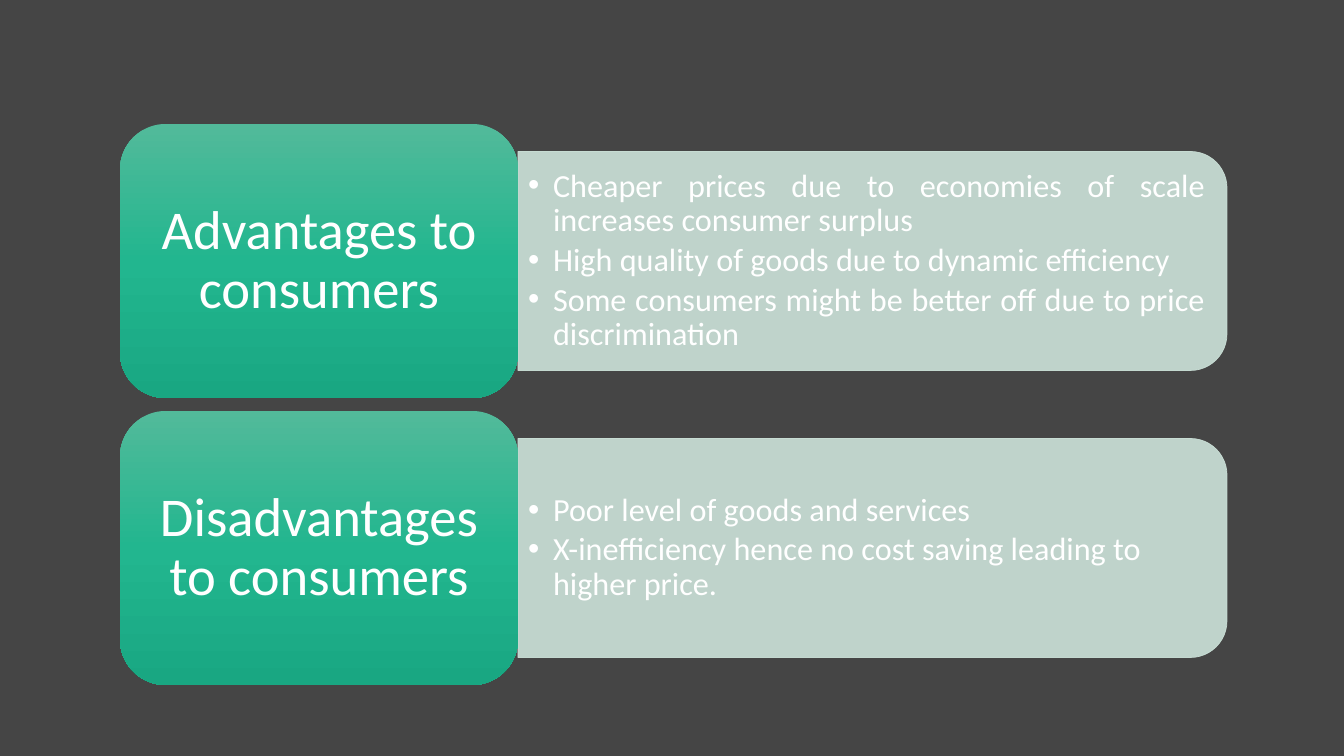
from copy import deepcopy

from pptx import Presentation
from pptx.dml.color import RGBColor
from pptx.enum.shapes import MSO_SHAPE as Shape
from pptx.enum.text import MSO_ANCHOR as Anchor, MSO_AUTO_SIZE as AutoSize, PP_ALIGN as Align
from pptx.oxml.ns import qn
from pptx.util import Pt

PX = 12192000 / 1344  # EMU per px
BACKGROUND = RGBColor(0x45, 0x45, 0x45)
PANEL = RGBColor(0xCD, 0xE3, 0xDA)
WHITE = RGBColor(0xFF, 0xFF, 0xFF)
CARD_STOPS = [
    (0, RGBColor(0x52, 0xBA, 0x9A)),
    (0.5, RGBColor(0x22, 0xB6, 0x8F)),
    (1, RGBColor(0x19, 0xA7, 0x82)),
]

CARD_LEFT, CARD_TOP, CARD_WIDTH, CARD_HEIGHT = 120, 124, 398, 274
PANEL_LEFT, PANEL_WIDTH, PANEL_HEIGHT = 518, 709, 219
LIST_WIDTH, LIST_HEIGHT = 698, 198
ROW_PITCH = 287

ROWS = [
    ("Advantages to consumers", Align.JUSTIFY, [
        "Cheaper prices due to economies of scale increases consumer surplus",
        "High quality of goods due to dynamic efficiency",
        "Some consumers might be better off due to price discrimination",
    ]),
    ("Disadvantages to consumers", Align.LEFT, [
        "Poor level of goods and services",
        "X-inefficiency hence no cost saving leading to higher price.",
    ]),
]


def px(*lengths):
    return [round(length * PX) for length in lengths]


def write_text(shape, lines, size, align, space_after, margins):
    frame = shape.text_frame
    frame.text = "\n".join(lines)
    horizontal, vertical = px(*margins)
    frame_format = {
        "word_wrap": True, "auto_size": AutoSize.NONE, "vertical_anchor": Anchor.MIDDLE,
        "margin_left": horizontal, "margin_right": horizontal,
        "margin_top": vertical, "margin_bottom": vertical,
    }
    paragraph_format = {
        "alignment": align, "line_spacing": 0.9,
        "space_before": Pt(0), "space_after": Pt(size * space_after),
    }
    for name, value in frame_format.items():
        setattr(frame, name, value)
    for paragraph in frame.paragraphs:
        for name, value in paragraph_format.items():
            setattr(paragraph, name, value)
        for run in paragraph.runs:
            run.font.name, run.font.size = "Calibri", Pt(size)
            run.font.color.rgb = WHITE


presentation = Presentation()
presentation.slide_width, presentation.slide_height = px(1344, 756)
slide = presentation.slides.add_slide(presentation.slide_layouts.get_by_name("Two Content"))
slide.background.fill.solid()
slide.background.fill.fore_color.rgb = BACKGROUND

title, *lists = list(slide.placeholders)[:3]
title.element.getparent().remove(title.element)

for row, (heading, align, points) in enumerate(ROWS):
    card_top = CARD_TOP + row * ROW_PITCH
    middle = card_top + CARD_HEIGHT / 2

    # The panel stands upright and is turned a quarter, so its round corners face right.
    panel = slide.shapes.add_shape(
        Shape.ROUND_2_SAME_RECTANGLE,
        *px(PANEL_LEFT + (PANEL_WIDTH - PANEL_HEIGHT) / 2, middle - PANEL_WIDTH / 2,
            PANEL_HEIGHT, PANEL_WIDTH))
    panel.rotation = 90
    panel.shadow.inherit = False
    panel.line.width = Pt(0.5)
    for fill in (panel.fill, panel.line.fill):
        fill.solid()
        fill.fore_color.rgb = PANEL
    for color in panel.element.spPr.iter(qn("a:srgbClr")):
        color.makeelement(qn("a:alpha"), {})
        alpha = color.makeelement(qn("a:alpha"), {"val": "90000"})
        color.append(alpha)

    bullets = lists[row]
    bullets.left, bullets.top, bullets.width, bullets.height = px(
        PANEL_LEFT, middle - LIST_HEIGHT / 2, LIST_WIDTH, LIST_HEIGHT)
    panel.element.addnext(bullets.element)
    write_text(bullets, points, 23, align, 0.15, (10, 5))
    (indent,) = px(25)
    for paragraph in bullets.text_frame.paragraphs:
        properties = paragraph._p.get_or_add_pPr()
        properties.set("marL", str(indent))
        properties.set("indent", str(-indent))

    card = slide.shapes.add_shape(
        Shape.ROUNDED_RECTANGLE, *px(CARD_LEFT, card_top, CARD_WIDTH, CARD_HEIGHT))
    card.shadow.inherit = False
    card.line.fill.background()
    card.fill.gradient()
    card.fill.gradient_angle = 270
    stop_list = card.element.spPr.find(".//" + qn("a:gsLst"))
    stop_list.append(deepcopy(stop_list[-1]))
    for stop, (position, color) in zip(card.fill.gradient_stops, CARD_STOPS):
        stop.position = position
        stop.color.rgb = color
    write_text(card, [heading], 39, Align.CENTER, 0.35, (16, 8))

presentation.save("out.pptx")
